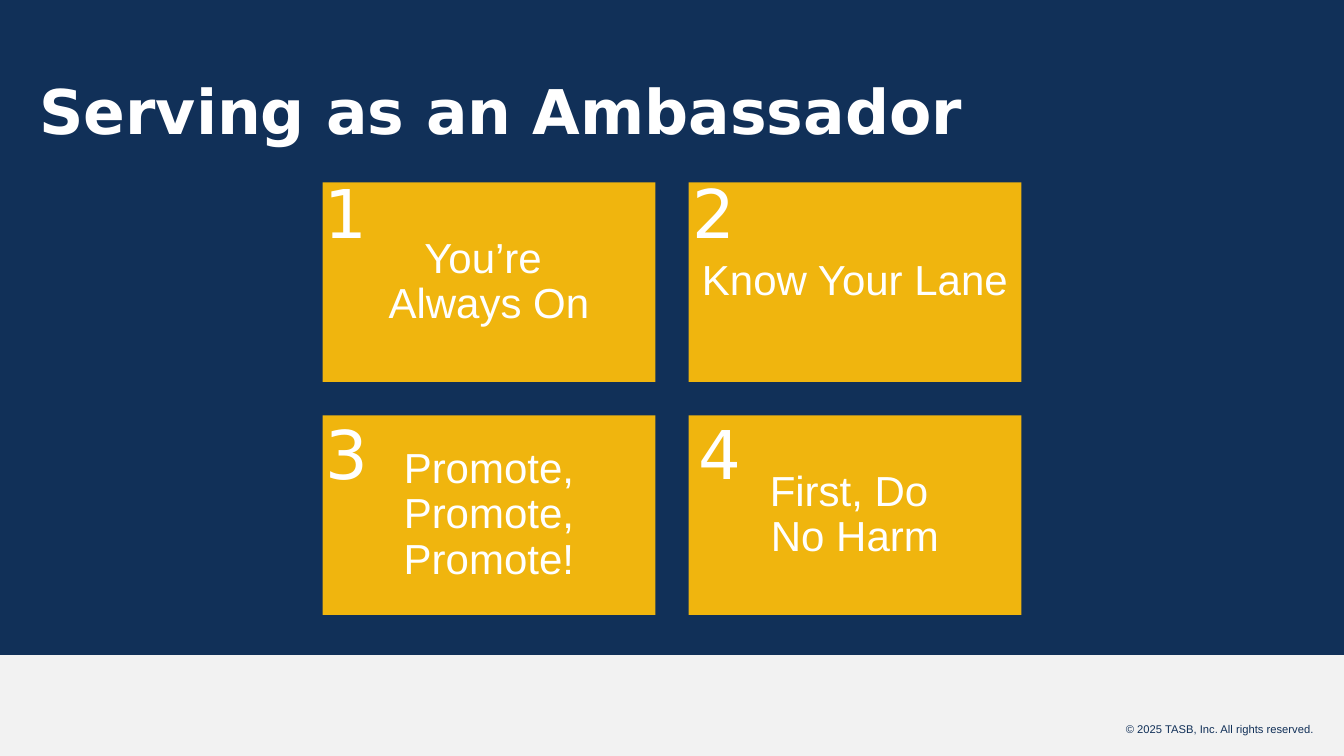
import pptx
import pptx.util
import pptx.dml.color
import pptx.enum.shapes
import pptx.enum.text

IN = pptx.util.Inches
ALIGN = pptx.enum.text.PP_ALIGN
ANCHOR = pptx.enum.text.MSO_ANCHOR
W, H = 13.33, 7.5
NAVY, GOLD, WHITE, PALE = "113058", "F0B50E", "FFFFFF", "F2F2F2"
CARDS = [
    ("1", ["You’re ", "Always On"], (-0.08, -0.16)),
    ("2", ["Know Your Lane"], (-0.06, -0.16)),
    ("3", ["Promote, Promote, Promote!"], (-0.07, -0.08)),
    ("4", ["First, Do ", "No Harm"], (0, -0.08)),
]


def rgb(value):
    """Turn a hex string into a colour."""
    return pptx.dml.color.RGBColor.from_string(value)


def write(tf, lines, size, font, color, align=ALIGN.LEFT, bold=False, spacing=1.0):
    """Write lines as one paragraph, parted by line breaks."""
    tf.word_wrap = True
    p = tf.paragraphs[0]
    p.alignment = align
    p.line_spacing = spacing
    for i, line in enumerate(lines):
        if i:
            p.add_line_break()
        r = p.add_run()
        r.text = line
        r.font.size = pptx.util.Pt(size)
        r.font.name = font
        r.font.bold = bold
        r.font.color.rgb = rgb(color)


def add_rect(s, x, y, w, h, fill):
    """Add a plain filled rectangle."""
    sp = s.shapes.add_shape(pptx.enum.shapes.MSO_SHAPE.RECTANGLE, IN(x), IN(y), IN(w), IN(h))
    sp.shadow.inherit = False
    sp.fill.solid()
    sp.fill.fore_color.rgb = rgb(fill)
    sp.line.fill.background()
    return sp


def add_title(s, x, y, w, h):
    """Place and format the title placeholder."""
    sp = s.shapes.title
    sp.left, sp.top, sp.width, sp.height = IN(x), IN(y), IN(w), IN(h)
    tf = sp.text_frame
    tf.vertical_anchor = ANCHOR.MIDDLE
    write(tf, ["Serving as an Ambassador"], 44, "DejaVu Sans", WHITE, bold=True, spacing=0.9)


def add_footer(s, x, y, w, h):
    """Draw the pale footer band with its copyright line."""
    add_rect(s, x, y, w, h, PALE)
    tf = s.shapes.add_textbox(IN(x + w - 3.2), IN(y + 0.62), IN(3), IN(0.24)).text_frame
    write(tf, ["© 2025 TASB, Inc. All rights reserved."], 8, "Arial", NAVY, ALIGN.RIGHT)


def add_card(s, x, y, w, h, lines):
    """Draw one gold card with centred text."""
    tf = add_rect(s, x, y, w, h, GOLD).text_frame
    tf.vertical_anchor = ANCHOR.MIDDLE
    tf.margin_left = tf.margin_right = tf.margin_top = tf.margin_bottom = IN(0.12)
    write(tf, lines, 30, "Arial", WHITE, ALIGN.CENTER, spacing=0.9)


def add_number(s, x, y, number):
    """Place a large card number."""
    tf = s.shapes.add_textbox(IN(x), IN(y), IN(6.17), IN(0.91)).text_frame
    write(tf, [number], 48, "DejaVu Sans", WHITE)


def add_card_grid(s, x, y, w, h, gap=0.33, cols=2, rows=2):
    """Fill the box with a grid of numbered cards."""
    card_w = (w - gap * (cols - 1)) / cols
    card_h = (h - gap * (rows - 1)) / rows
    for i, (number, lines, (dx, dy)) in enumerate(CARDS):
        row, col = divmod(i, cols)
        left, top = x + col * (card_w + gap), y + row * (card_h + gap)
        add_card(s, left, top, card_w, card_h, lines)
        add_number(s, left + dx, top + dy, number)


def main():
    """Build the slide and save it."""
    prs = pptx.Presentation()
    prs.slide_width, prs.slide_height = IN(W), IN(H)
    s = prs.slides.add_slide(prs.slide_layouts[5])
    s.background.fill.solid()
    s.background.fill.fore_color.rgb = rgb(NAVY)
    add_footer(s, 0, H - 1, W, 1)
    add_title(s, 0.29, 0.41, 13.81, 1.45)
    add_card_grid(s, 3.2, 1.81, 6.93, 4.29)
    prs.save("out.pptx")


if __name__ == "__main__":
    main()
